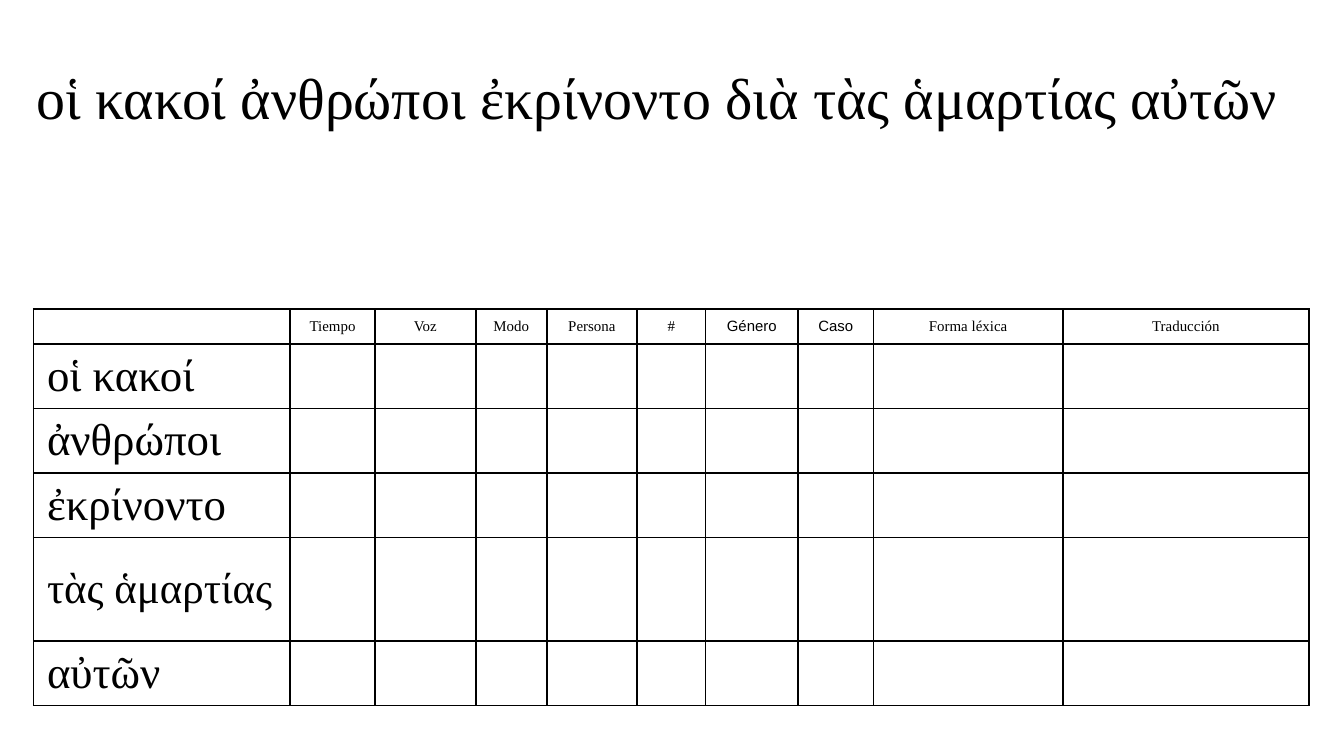
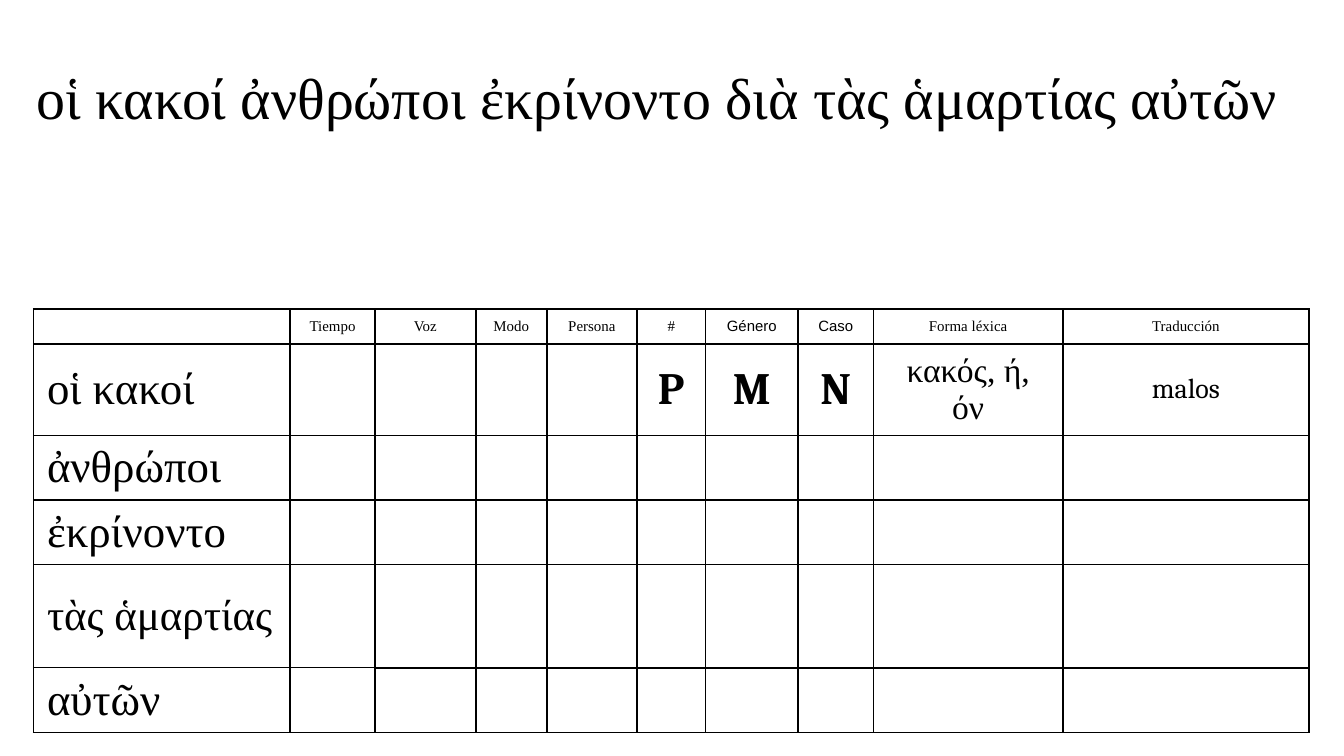
from dataclasses import dataclass

from lxml import etree
from pptx import Presentation
from pptx.dml.color import RGBColor
from pptx.enum import text
from pptx.oxml import ns
from pptx.util import Inches, Pt

BLACK = RGBColor(0x00, 0x00, 0x00)
SERIF, SANS, CAMBRIA = "Times New Roman", "Arial", "Cambria"
LEFT, CENTER = text.PP_ALIGN.LEFT, text.PP_ALIGN.CENTER
SENTENCE = "οἱ κακοί ἀνθρώποι ἐκρίνοντο διὰ τὰς ἁμαρτίας αὐτῶν"
HEADER_HEIGHT = 0.26
HEADER_SIZE, EMPTY_SIZE = 8, 18
OUTER_LINE, THIN_LINE = 1, 0.75


@dataclass(frozen=True)
class Entry:
    """The text of one table cell and its look."""
    words: str
    size: float
    font: str = SERIF
    bold: bool = False
    align: text.PP_ALIGN = CENTER


@dataclass(frozen=True)
class Category:
    """One column of the parsing table."""
    name: str
    width: float
    font: str = SERIF


@dataclass(frozen=True)
class Word:
    """One row of the parsing table."""
    greek: str
    height: float = 0.43
    size: float = 24


CATEGORIES = [
    Category("", 1.91),
    Category("Tiempo", 0.63),
    Category("Voz", 0.75),
    Category("Modo", 0.53),
    Category("Persona", 0.67),
    Category("#", 0.51),
    Category("Género", 0.69, SANS),
    Category("Caso", 0.56, SANS),
    Category("Forma léxica", 1.41),
    Category("Traducción", 1.83),
]
WORDS = [
    Word("οἱ κακοί"),
    Word("ἀνθρώποι"),
    Word("ἐκρίνοντο"),
    Word("τὰς ἁμαρτίας", height=0.77, size=23),
    Word("αὐτῶν"),
]
Answers = dict[tuple[str, str], Entry]
NO_ANSWERS: Answers = {}
FIRST_ANSWERS: Answers = {
    ("οἱ κακοί", "#"): Entry("P", 24, CAMBRIA, bold=True),
    ("οἱ κακοί", "Género"): Entry("M", 24, CAMBRIA, bold=True),
    ("οἱ κακοί", "Caso"): Entry("N", 24, CAMBRIA, bold=True),
    ("οἱ κακοί", "Forma léxica"): Entry("κακός, ή, όν", 18),
    ("οἱ κακοί", "Traducción"): Entry("malos", 15, CAMBRIA),
}


def write(paragraph, entry: Entry) -> None:
    paragraph.alignment = entry.align
    if not entry.words:
        end = etree.SubElement(paragraph._p, ns.qn("a:endParaRPr"))
        end.set("sz", str(entry.size * 100))
        return
    run = paragraph.add_run()
    run.text = entry.words
    run.font.size = Pt(entry.size)
    run.font.name = entry.font
    run.font.bold = entry.bold
    run.font.color.rgb = BLACK


def add_title(slide) -> None:
    title = slide.shapes.title
    title.left, title.top = Inches(0.17), Inches(0.41)
    title.width, title.height = Inches(9.67), Inches(0.62)
    frame = title.text_frame
    frame.word_wrap = True
    frame.auto_size = text.MSO_AUTO_SIZE.SHAPE_TO_FIT_TEXT
    frame.vertical_anchor = text.MSO_ANCHOR.MIDDLE
    write(frame.paragraphs[0], Entry(SENTENCE, 31, align=LEFT))


def set_borders(cell, row: int, column: int) -> None:
    """Rule the cell; the first two columns have thinner lines between rows."""
    thin = column < 2
    widths = {
        "L": OUTER_LINE,
        "R": OUTER_LINE,
        "T": THIN_LINE if thin and row > 0 else OUTER_LINE,
        "B": THIN_LINE if thin else OUTER_LINE,
    }
    properties = cell._tc.get_or_add_tcPr()
    for place, (side, width) in enumerate(widths.items()):
        line = etree.Element(ns.qn(f"a:ln{side}"), w=str(Pt(width)))
        fill = etree.SubElement(line, ns.qn("a:solidFill"))
        etree.SubElement(fill, ns.qn("a:srgbClr"), val=str(BLACK))
        properties.insert(place, line)


def fill_cell(cell, entry: Entry) -> None:
    cell.fill.background()
    cell.vertical_anchor = text.MSO_ANCHOR.MIDDLE
    cell.margin_left = cell.margin_right = Inches(0.1)
    cell.margin_top = cell.margin_bottom = Inches(0.04)
    write(cell.text_frame.paragraphs[0], entry)


def table_entries(answers: Answers) -> list[list[Entry]]:
    header = [Entry(c.name, HEADER_SIZE, c.font) for c in CATEGORIES]
    blank = Entry("", EMPTY_SIZE)
    body = [
        [Entry(word.greek, word.size, align=LEFT)]
        + [answers.get((word.greek, c.name), blank) for c in CATEGORIES[1:]]
        for word in WORDS
    ]
    return [header, *body]


def add_parsing_table(slide, answers: Answers) -> None:
    entries = table_entries(answers)
    frame = slide.shapes.add_table(
        len(entries), len(CATEGORIES),
        Inches(0.25), Inches(2.3), Inches(9.5), Inches(2.94),
    )
    parsing = frame.table
    parsing.first_row = parsing.horz_banding = False
    for column, category in zip(parsing.columns, CATEGORIES):
        column.width = Inches(category.width)
    heights = [HEADER_HEIGHT] + [word.height for word in WORDS]
    for row, height in zip(parsing.rows, heights):
        row.height = Inches(height)
    frame.width, frame.height = Inches(9.5), Inches(2.94)
    for r, row_entries in enumerate(entries):
        for c, entry in enumerate(row_entries):
            cell = parsing.cell(r, c)
            fill_cell(cell, entry)
            set_borders(cell, r, c)


def main() -> None:
    deck = Presentation()
    deck.slide_width = Inches(10)
    deck.slide_height = deck.slide_width * 9 // 16
    title_only = deck.slide_layouts[5]
    for answers in (NO_ANSWERS, FIRST_ANSWERS):
        slide = deck.slides.add_slide(title_only)
        add_title(slide)
        add_parsing_table(slide, answers)
    deck.save("out.pptx")


if __name__ == "__main__":
    main()
